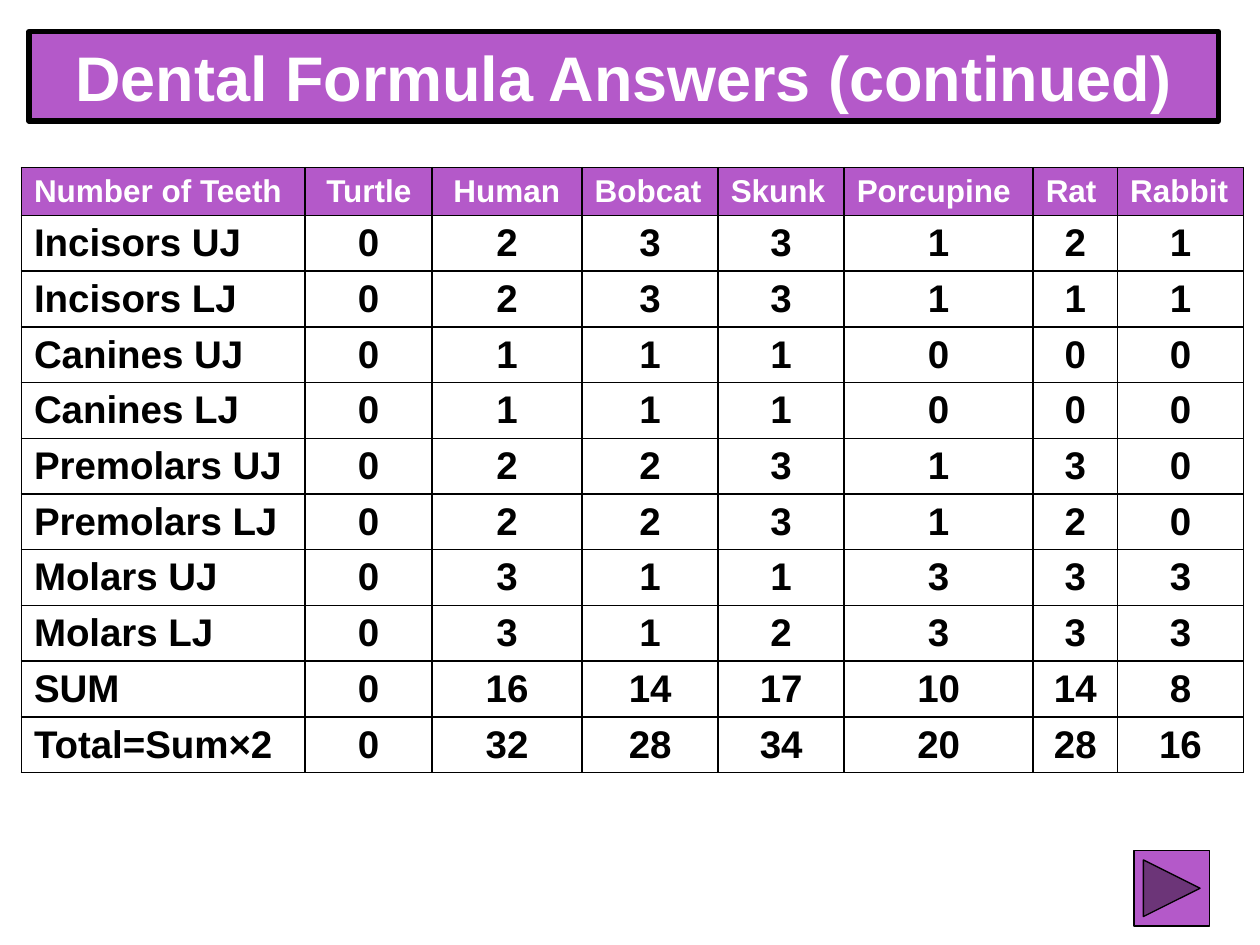
"""Build the slide of dental formula answers."""
from lxml.etree import SubElement
from pptx import Presentation
from pptx.dml.color import RGBColor
from pptx.enum.shapes import MSO_SHAPE
from pptx.enum.text import MSO_ANCHOR, MSO_AUTO_SIZE, PP_ALIGN
from pptx.oxml.ns import qn
from pptx.util import Inches, Pt

PURPLE, BLACK, WHITE = "B459C9", "000000", "FFFFFF"
COLS = [2.25, 1.01, 1.19, 1.08, 1, 1.5, 0.67, 1]
HEADER_H, ROW_H = 0.38, 0.44
HANG = Inches(0.38)
ROWS = [
    ["Number of Teeth", " Turtle", " Human", "Bobcat", "Skunk", "Porcupine", "Rat", "Rabbit"],
    ["Incisors UJ", 0, 2, 3, 3, 1, 2, 1],
    ["Incisors LJ", 0, 2, 3, 3, 1, 1, 1],
    ["Canines UJ", 0, 1, 1, 1, 0, 0, 0],
    ["Canines LJ", 0, 1, 1, 1, 0, 0, 0],
    ["Premolars UJ", 0, 2, 2, 3, 1, 3, 0],
    ["Premolars LJ", 0, 2, 2, 3, 1, 2, 0],
    ["Molars UJ", 0, 3, 1, 1, 3, 3, 3],
    ["Molars LJ", 0, 3, 1, 2, 3, 3, 3],
    ["SUM", 0, 16, 14, 17, 10, 14, 8],
    ["Total=Sum×2", 0, 32, 28, 34, 20, 28, 16],
]


def paint(fmt, color):
    fmt.solid()
    fmt.fore_color.rgb = RGBColor.from_string(color)


def write(p, text, size, color, align):
    p.alignment = align
    r = p.add_run()
    r.text = text
    r.font.name, r.font.size, r.font.bold = "Arial", Pt(size), True
    paint(r.font.fill, color)


prs = Presentation()
prs.slide_width, prs.slide_height = Inches(10), Inches(7.5)
s = prs.slides.add_slide(prs.slide_layouts[5])

title = s.shapes.title
title.left, title.top, title.width, title.height = map(Inches, (0.23, 0.25, 9.44, 0.71))
paint(title.fill, PURPLE)
paint(title.line.fill, BLACK)
title.line.width = Pt(3)
tf = title.text_frame
tf.word_wrap, tf.auto_size, tf.vertical_anchor = True, MSO_AUTO_SIZE.NONE, MSO_ANCHOR.MIDDLE
write(tf.paragraphs[0], "Dental Formula Answers (continued)", 36, WHITE, PP_ALIGN.CENTER)

height = HEADER_H + ROW_H * (len(ROWS) - 1)
table = s.shapes.add_table(len(ROWS), len(COLS), Inches(0.17), Inches(1.33),
                           Inches(sum(COLS)), Inches(height)).table
table.first_row = table.horz_banding = False
for col, width in zip(table.columns, COLS):
    col.width = Inches(width)
for i, values in enumerate(ROWS):
    table.rows[i].height = Inches(ROW_H if i else HEADER_H)
    for j, value in enumerate(values):
        cell = table.cell(i, j)
        cell.vertical_anchor = MSO_ANCHOR.BOTTOM
        p = cell.text_frame.paragraphs[0]
        align = PP_ALIGN.CENTER if i and j else PP_ALIGN.LEFT
        write(p, str(value), 22 if i else 18, BLACK if i else WHITE, align)
        pPr = p._p.get_or_add_pPr()
        pPr.set("marL", str(HANG))
        pPr.set("indent", str(-HANG))
        tcPr = cell._tc.get_or_add_tcPr()
        for side in ("lnL", "lnR", "lnT", "lnB"):
            ln = SubElement(tcPr, qn(f"a:{side}"), w=str(Pt(1)))
            SubElement(SubElement(ln, qn("a:solidFill")), qn("a:srgbClr"), val=BLACK)
        if i:
            cell.fill.background()
        else:
            paint(cell.fill, PURPLE)

button = s.shapes.add_shape(MSO_SHAPE.ACTION_BUTTON_FORWARD_OR_NEXT,
                            Inches(9), Inches(6.75), Inches(0.6), Inches(0.6))
button.shadow.inherit = False
paint(button.fill, PURPLE)
paint(button.line.fill, BLACK)
button.line.width = Pt(0.75)

prs.save("out.pptx")
